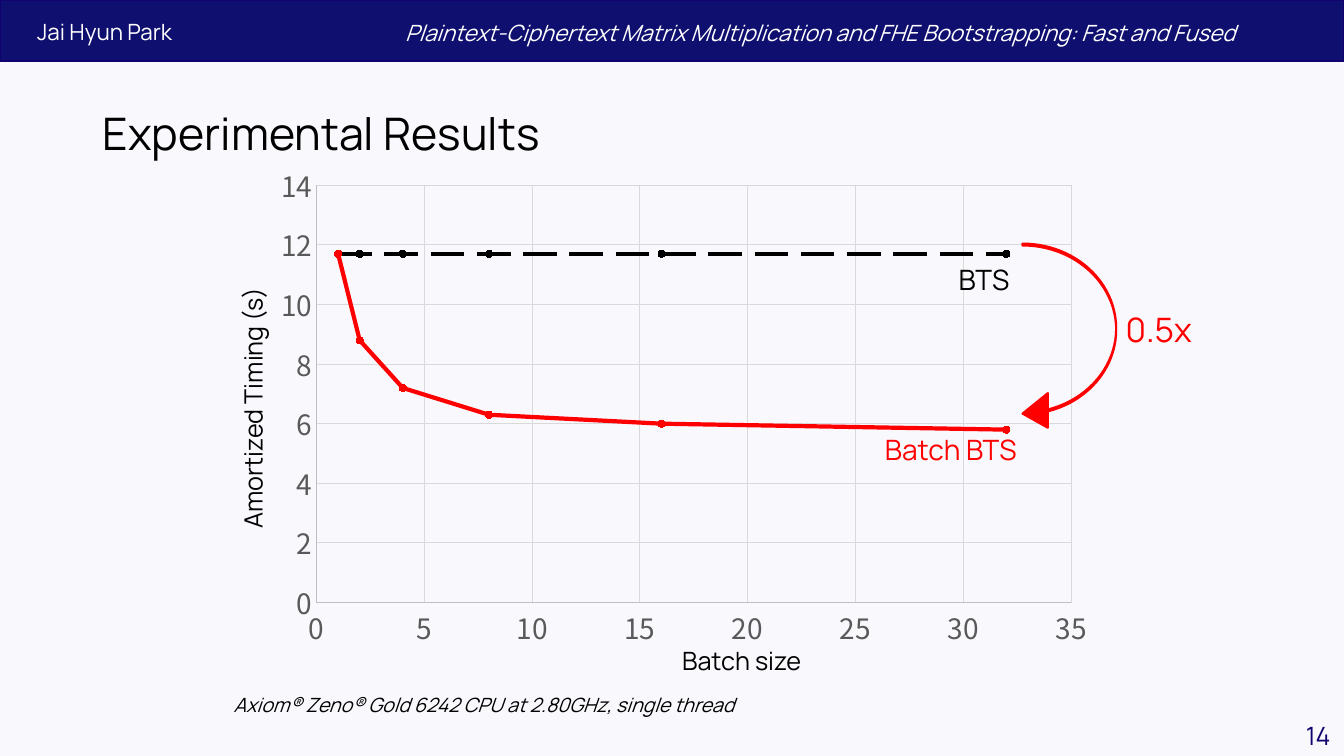
import dataclasses

import pptx
import pptx.chart.data
import pptx.dml.color
import pptx.enum.chart
import pptx.enum.dml
import pptx.enum.shapes
import pptx.enum.text
import pptx.oxml
import pptx.oxml.ns
import pptx.util

Cm = pptx.util.Cm
Pt = pptx.util.Pt
ALIGN = pptx.enum.text.PP_ALIGN


@dataclasses.dataclass(frozen=True)
class Theme:
    paper: str = "F9F8FD"
    navy: str = "0F0F70"
    edge: str = "10036F"
    white: str = "FFFFFF"
    black: str = "000000"
    red: str = "FF0000"
    grey: str = "595959"
    axis: str = "BFBFBF"
    grid: str = "D9D9D9"
    font: str = "Manrope"
    digit: str = "Noto Sans CJK KR"
    title: int = 32
    ratio: int = 24
    label: int = 20
    small: int = 18
    head: int = 16
    note: int = 14


THEME = Theme()


def tint(code):
    return pptx.dml.color.RGBColor.from_string(code)


def paint(fill, code):
    fill.solid()
    fill.fore_color.rgb = tint(code)


def stroke(line, code, width):
    paint(line.fill, code)
    line.width = Pt(width)


def add_shape(slide, kind, box, fill, edge):
    shape = slide.shapes.add_shape(kind, *map(Cm, box))
    shape.shadow.inherit = False
    paint(shape.fill, fill)
    stroke(shape.line, edge, 1.5)
    return shape


def add_text(slide, text, box, size, code, align=ALIGN.LEFT, slant=False,
             gap=0, pitch=None, turn=0, middle=False):
    shape = slide.shapes.add_textbox(*map(Cm, box))
    shape.rotation = turn
    frame = shape.text_frame
    frame.word_wrap = True
    if middle:
        frame.vertical_anchor = pptx.enum.text.MSO_ANCHOR.MIDDLE
    para = frame.paragraphs[0]
    para.alignment = align
    para.space_before = Pt(gap)
    para.line_spacing = pitch
    run = para.add_run()
    run.text = text
    run.font.name = THEME.font
    run.font.size = Pt(size)
    run.font.italic = slant
    run.font.color.rgb = tint(code)


def add_label(slide, text, box, size, code, **style):
    add_text(slide, text, box, size, code, gap=10, pitch=0.9, **style)


def style_axis(axis, top, step):
    axis.minimum_scale = 0
    axis.maximum_scale = top
    axis.major_unit = step
    axis.has_title = False
    axis.has_major_gridlines = True
    stroke(axis.major_gridlines.format.line, THEME.grid, 0.75)
    stroke(axis.format.line, THEME.axis, 0.75)
    axis.major_tick_mark = pptx.enum.chart.XL_TICK_MARK.NONE
    axis.minor_tick_mark = pptx.enum.chart.XL_TICK_MARK.NONE
    font = axis.tick_labels.font
    font.name = THEME.digit
    font.size = Pt(THEME.label)
    font.color.rgb = tint(THEME.grey)
    axis.tick_labels.number_format = "General"
    axis.tick_labels.number_format_is_linked = False


def style_curve(curve, code):
    curve.smooth = False
    stroke(curve.format.line, code, 3)
    mark = curve.marker
    mark.style = pptx.enum.chart.XL_MARKER_STYLE.CIRCLE
    mark.size = 5
    paint(mark.format.fill, code)
    stroke(mark.format.line, code, 0.75)


def place_plot(chart, x, y, w, h):
    area = chart._chartSpace.chart.plotArea
    for old in area.findall(pptx.oxml.ns.qn("c:layout")):
        area.remove(old)
    area.insert(0, pptx.oxml.parse_xml(
        f'<c:layout {pptx.oxml.ns.nsdecls("c")}><c:manualLayout>'
        '<c:layoutTarget val="inner"/><c:xMode val="edge"/><c:yMode val="edge"/>'
        f'<c:x val="{x}"/><c:y val="{y}"/><c:w val="{w}"/><c:h val="{h}"/>'
        '</c:manualLayout></c:layout>'))


def add_plot(slide, box):
    sizes = [2 ** n for n in range(6)]
    curves = {
        "Series 1": [11.7, 8.8, 7.2, 6.3, 6, 5.8],
        "Series 2": [11.7] * len(sizes),
    }
    data = pptx.chart.data.XyChartData()
    for name, times in curves.items():
        group = data.add_series(name)
        for size, time in zip(sizes, times):
            group.add_data_point(size, time)
    kind = pptx.enum.chart.XL_CHART_TYPE.XY_SCATTER_LINES
    chart = slide.shapes.add_chart(kind, *map(Cm, box), data).chart
    chart.has_legend = False
    chart.has_title = False
    chart.font.name = THEME.digit
    chart.font.size = Pt(10)
    chart.font.color.rgb = tint(THEME.black)
    style_axis(chart.category_axis, 35, 5)
    style_axis(chart.value_axis, 14, 2)
    plot = chart.plots[0]
    plot.vary_by_categories = False
    batch, base = plot.series
    style_curve(batch, THEME.red)
    style_curve(base, THEME.black)
    base.format.line.dash_style = pptx.enum.dml.MSO_LINE.LONG_DASH
    place_plot(chart, 0.06, 0.06, 0.9, 0.83)


def add_arc(slide, box):
    kind = pptx.enum.shapes.MSO_SHAPE.CURVED_UP_ARROW
    arc = add_shape(slide, kind, box, THEME.red, THEME.red)
    for spot, value in enumerate((0.02, 0.37, 0.27)):
        arc.adjustments[spot] = value
    arc.rotation = 270
    arc._element.spPr.find(pptx.oxml.ns.qn("a:xfrm")).set("flipH", "1")


def add_head(slide):
    kind = pptx.enum.shapes.MSO_SHAPE.RECTANGLE
    add_shape(slide, kind, (0, 0, 33.87, 1.55), THEME.navy, THEME.edge)
    add_text(slide, "Jai Hyun Park ", (-0.33, 0.33, 5.03, 0.94),
             THEME.head, THEME.white, align=ALIGN.RIGHT)
    add_text(slide, "Plaintext-Ciphertext Matrix Multiplication and FHE "
             "Bootstrapping: Fast and Fused", (9.96, 0.36, 24.26, 0.94),
             THEME.head, THEME.white, slant=True)


def main():
    deck = pptx.Presentation()
    deck.slide_width = Cm(33.87)
    deck.slide_height = Cm(19.05)
    slide = deck.slides.add_slide(deck.slide_layouts[6])
    paint(slide.background.fill, THEME.paper)
    add_head(slide)
    add_text(slide, "Experimental Results", (2.34, 2.18, 29.21, 2.51),
             THEME.title, THEME.black, pitch=0.9, middle=True)
    add_text(slide, "14", (31.95, 18.03, 1.83, 1.02),
             THEME.small, THEME.edge, align=ALIGN.RIGHT)
    add_label(slide, "Axiom® Zeno® Gold 6242 CPU at 2.80GHz, single thread",
              (5.64, 17.4, 13.36, 1.22), THEME.note, THEME.black, slant=True)
    add_plot(slide, (6.71, 3.91, 21.13, 12.67))
    add_arc(slide, (24.59, 7.32, 4.72, 2.36))
    add_label(slide, "0.5x", (28.12, 7.77, 2.97, 1.91), THEME.ratio, THEME.red)
    add_label(slide, "Amortized Timing (s)", (2.21, 8.31, 8.99, 1.52),
              THEME.small, THEME.black, turn=270)
    add_label(slide, "Batch size", (16.94, 16.23, 5.11, 1.52),
              THEME.small, THEME.black)
    add_label(slide, "Batch BTS", (22.05, 10.87, 4.67, 1.5),
              THEME.label, THEME.red)
    add_label(slide, "BTS", (23.62, 6.58, 2.36, 4.19),
              THEME.label, THEME.black, align=ALIGN.CENTER)
    deck.save("out.pptx")


if __name__ == "__main__":
    main()
